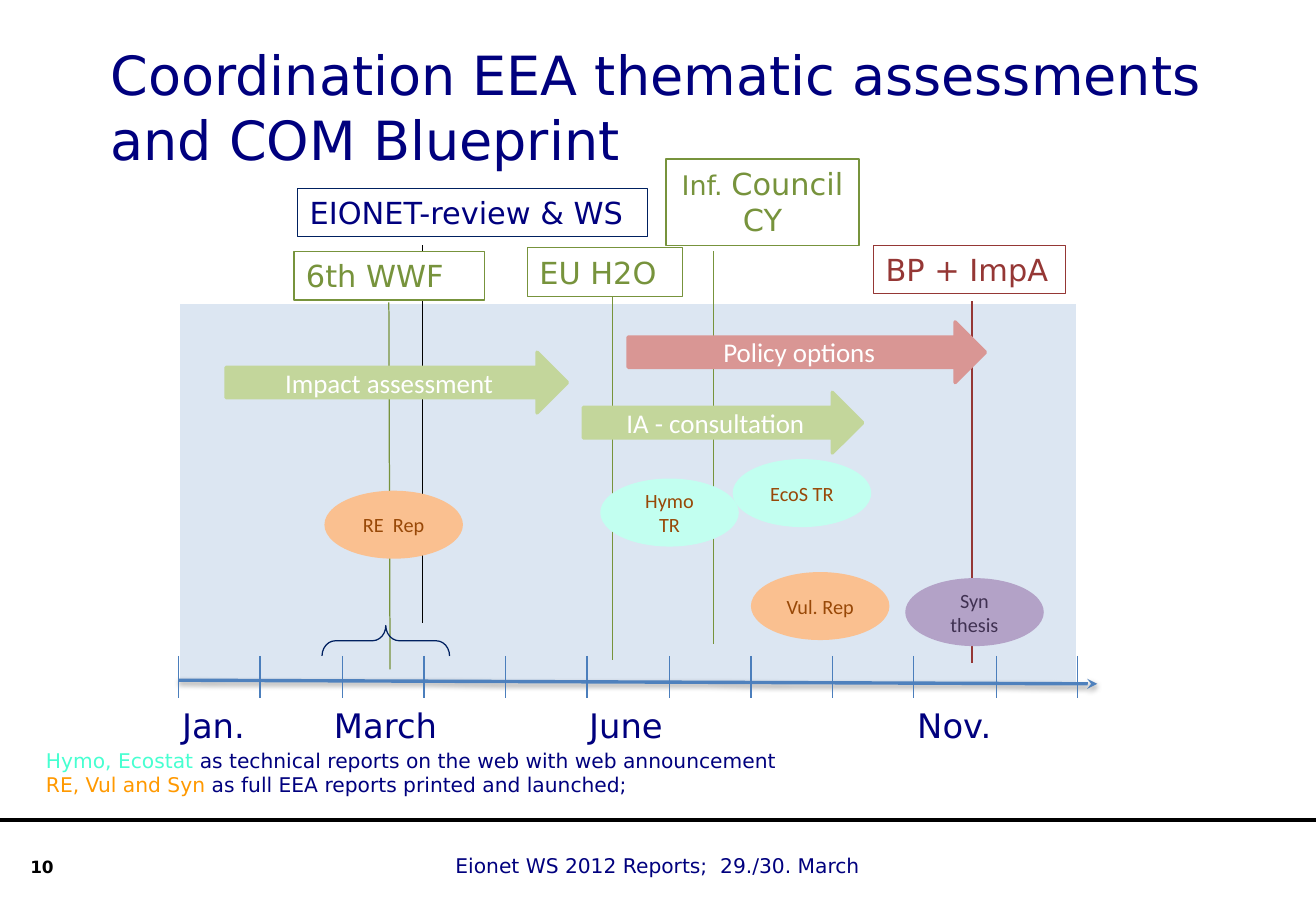
from dataclasses import dataclass
from typing import Optional

from lxml.etree import SubElement
from pptx import Presentation
from pptx.dml.color import RGBColor
from pptx.enum.shapes import MSO_CONNECTOR, MSO_SHAPE as SHAPE
from pptx.enum.text import MSO_ANCHOR as ANCHOR, PP_ALIGN as ALIGN
from pptx.oxml.ns import qn
from pptx.util import Pt

EMU_PER_PX = 9144  # 100 px to the inch
NAVY, GREEN, RED, BROWN = "00007E", "77933C", "953735", "984807"
LIME, ROSE, PEACH, MINT = "C3D69B", "D99694", "FAC090", "C2FFF0"
SANS, BODY = "DejaVu Sans", "Calibri"


@dataclass
class Box:
    left: int
    top: int
    width: int
    height: int


@dataclass
class Line:
    x1: int
    y1: int
    x2: int
    y2: int
    color: str
    weight: float = 0.75


@dataclass
class Milestone:
    runs: list
    box: Box
    text_color: str
    line_color: str
    fill: Optional[str] = None
    align: ALIGN = ALIGN.LEFT


@dataclass
class Phase:
    label: str
    box: Box
    color: str


@dataclass
class Report:
    label: str
    left: int
    top: int
    fill: str
    text_color: str = BROWN


def px(length: int) -> int:
    return length * EMU_PER_PX


def place(box: Box) -> tuple:
    return px(box.left), px(box.top), px(box.width), px(box.height)


def rgb(color: str) -> RGBColor:
    return RGBColor.from_string(color)


def write(frame, runs, size=12, color=NAVY, font=SANS, bold=False,
          align=ALIGN.LEFT, anchor=ANCHOR.TOP, wrap=True) -> None:
    """Runs are a string or (text, overrides) pairs; "\\n" breaks the line."""
    frame.word_wrap, frame.vertical_anchor = wrap, anchor
    paragraph = frame.paragraphs[0]
    paragraph.alignment = align
    for text, own in [(runs, {})] if isinstance(runs, str) else runs:
        if text == "\n":
            paragraph.add_line_break()
            continue
        run = paragraph.add_run()
        run.text = text
        run.font.name, run.font.bold = font, bold
        run.font.size = Pt(own.get("size", size))
        run.font.color.rgb = rgb(own.get("color", color))


def add_text(box: Box, runs, **style) -> None:
    write(slide.shapes.add_textbox(*place(box)).text_frame, runs, **style)


def add_shape(kind: SHAPE, box: Box, fill: Optional[str] = None,
              line: Optional[str] = None, weight: float = 0.75):
    shape = slide.shapes.add_shape(kind, *place(box))
    shape.shadow.inherit = False
    if fill:
        shape.fill.solid()
        shape.fill.fore_color.rgb = rgb(fill)
    else:
        shape.fill.background()
    if line:
        shape.line.color.rgb = rgb(line)
        shape.line.width = Pt(weight)
    else:
        shape.line.fill.background()
    return shape


def add_line(line: Line, arrow: bool = False) -> None:
    connector = slide.shapes.add_connector(
        MSO_CONNECTOR.STRAIGHT, px(line.x1), px(line.y1), px(line.x2), px(line.y2))
    connector.line.color.rgb = rgb(line.color)
    connector.line.width = Pt(line.weight)
    properties = connector.element.spPr
    effects = SubElement(properties, qn("a:effectLst"))
    if arrow:
        SubElement(properties.find(qn("a:ln")), qn("a:tailEnd"), type="stealth")
        shadow = SubElement(effects, qn("a:outerShdw"), blurRad="39370",
                            dist="20320", dir="5400000", rotWithShape="0")
        shade = SubElement(shadow, qn("a:srgbClr"), val="000000")
        SubElement(shade, qn("a:alpha"), val="38000")


presentation = Presentation()
presentation.slide_width, presentation.slide_height = px(1083), px(750)
slide = presentation.slides.add_slide(presentation.slide_layouts[5])

# Title and footer
title = slide.shapes.title
title.left, title.top, title.width, title.height = place(Box(81, 25, 921, 125))
write(title.text_frame, "Coordination EEA thematic assessments and COM Blueprint",
      size=32, anchor=ANCHOR.MIDDLE)
add_line(Line(0, 675, 1083, 675, "000000", 2.25))
add_text(Box(365, 698, 366, 30), "Eionet WS 2012 Reports;  29./30. March", wrap=False)
add_text(Box(0, 700, 54, 50), "10", size=10, color="000000", bold=True, align=ALIGN.RIGHT)

# Panel and time axis
add_shape(SHAPE.RECTANGLE, Box(147, 249, 740, 314), "DCE6F2", "FFFFFF", 2)
add_line(Line(147, 560, 903, 563, "4F81BD", 2), arrow=True)
TICKS = 12
for tick in range(TICKS):
    x = 147 + round(740 * tick / (TICKS - 1))
    add_line(Line(x, 540, x, 575, "4B7EBC"))
for month, left, width in [("Jan.", 140, 78), ("March", 265, 105),
                           ("June", 475, 85), ("Nov.", 745, 82)]:
    add_text(Box(left, 575, width, 44), month, size=20, wrap=False)

# Milestone lines and labels
for milestone_line in [
    Line(348, 202, 348, 513, "000000"),
    Line(587, 207, 587, 530, GREEN),
    Line(320, 249, 321, 551, GREEN),
    Line(504, 244, 504, 543, GREEN),
    Line(800, 248, 800, 546, RED),
]:
    add_line(milestone_line)
small = {"size": 16}
for milestone in [
    Milestone("EU H2O", Box(434, 204, 128, 40), GREEN, GREEN),
    Milestone("BP + ImpA", Box(719, 202, 158, 40), RED, RED),
    Milestone("6th WWF", Box(242, 207, 157, 40), GREEN, GREEN, "FFFFFF"),
    Milestone([("Inf. ", small), ("Council", {}), (" ", small), ("CY", {})],
              Box(548, 131, 159, 71), GREEN, GREEN, align=ALIGN.CENTER),
    Milestone("EIONET-review & WS", Box(245, 155, 288, 40), NAVY, "002060"),
]:
    label = add_shape(SHAPE.RECTANGLE, milestone.box, milestone.fill, milestone.line_color)
    write(label.text_frame, milestone.runs, size=18, color=milestone.text_color,
          align=milestone.align)

# Policy phases
for phase in [
    Phase("Impact assessment", Box(186, 290, 281, 50), LIME),
    Phase("IA - consultation", Box(480, 323, 230, 50), LIME),
    Phase("Policy options", Box(517, 265, 294, 50), ROSE),
]:
    arrow = add_shape(SHAPE.RIGHT_ARROW, phase.box, phase.color, phase.color, 2)
    write(arrow.text_frame, phase.label, size=16, color="FFFFFF", font=BODY,
          align=ALIGN.CENTER, anchor=ANCHOR.MIDDLE)

# Reports
for report in [
    Report("RE  Rep", 267, 404, PEACH),
    Report("Hymo TR", 494, 394, MINT),
    Report("Vul. Rep", 618, 471, PEACH),
    Report("EcoS TR", 603, 378, MINT),
    Report("Syn thesis", 745, 476, "B3A2C7", "403152"),
]:
    oval = add_shape(SHAPE.OVAL, Box(report.left, report.top, 114, 56), report.fill)
    write(oval.text_frame, report.label, color=report.text_color, font=BODY,
          align=ALIGN.CENTER, anchor=ANCHOR.MIDDLE)

# Brace over March
brace = add_shape(SHAPE.RIGHT_BRACE, Box(305, 475, 25, 105), line="002060")
brace.rotation = 270
brace.adjustments[0] = 0.44

# Key to the reports
add_text(Box(28, 611, 641, 50), [
    ("Hymo, Ecostat ", {"color": "47FFD1"}),
    ("as technical reports on the web with web announcement", {}),
    ("\n", {}),
    ("RE, Vul and Syn ", {"color": "FF9900"}),
    ("as full EEA reports printed and launched;", {}),
])

presentation.save("out.pptx")
